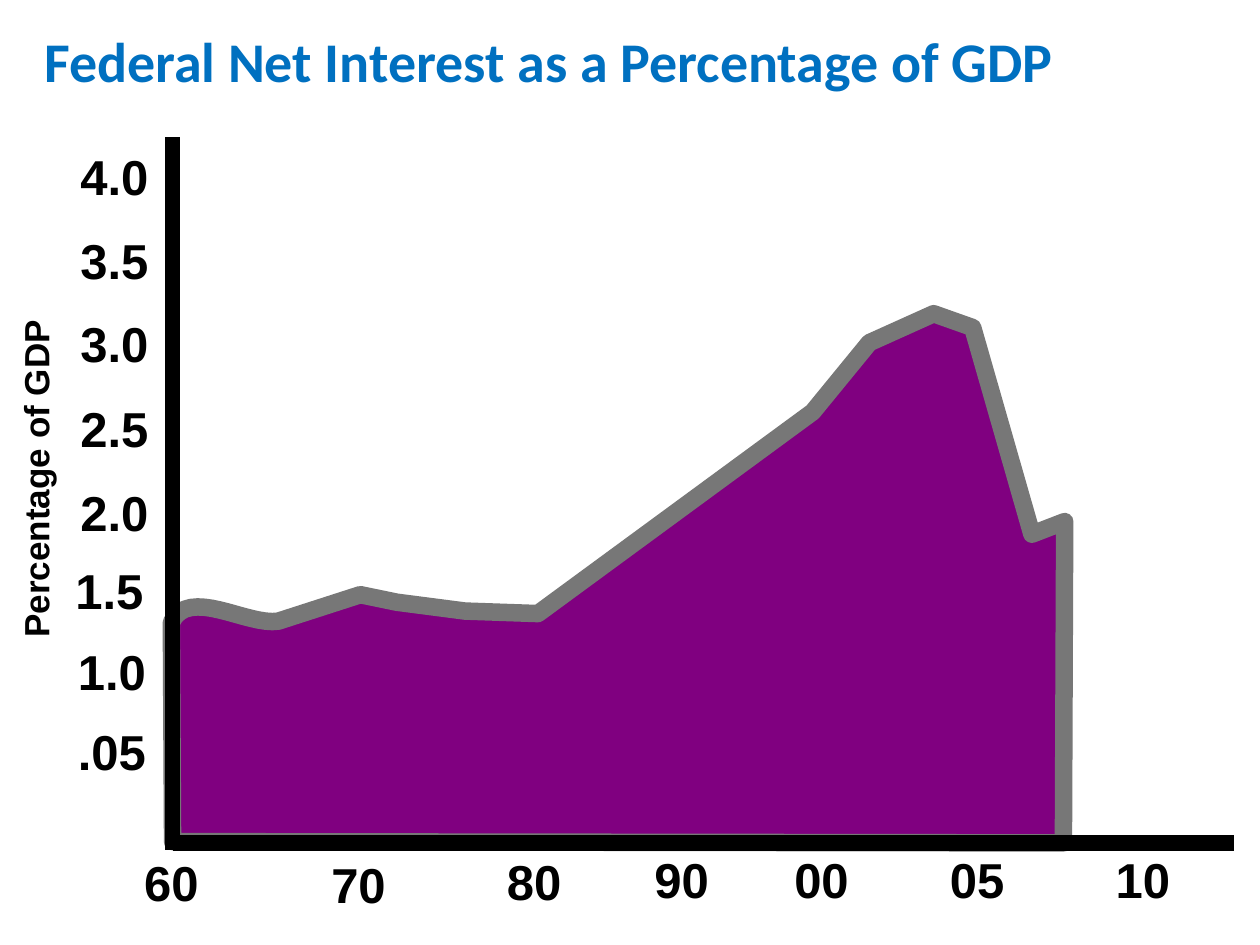
from collections import namedtuple
from dataclasses import dataclass

from lxml import etree
from pptx import Presentation
from pptx.dml.color import RGBColor
from pptx.enum import shapes, text
from pptx.oxml import ns
from pptx.util import Inches, Pt

Box = namedtuple("Box", "left top width height")


@dataclass(frozen=True)
class Theme:
    paper: RGBColor = RGBColor(0xFF, 0xFF, 0xFF)
    ink: RGBColor = RGBColor(0, 0, 0)
    heading: RGBColor = RGBColor(0x00, 0x70, 0xC0)
    area: RGBColor = RGBColor(0x80, 0x00, 0x80)
    outline: RGBColor = RGBColor(0x77, 0x77, 0x77)
    heading_font: str = "Calibri"
    label_font: str = "Arial"
    heading_size: int = 32
    label_size: int = 28
    caption_size: int = 20
    outline_width: int = 10
    axis_width: int = 9


THEME = Theme()
YEARS = [
    ("60", -0.42, 0.03, 0.82),
    ("70", 1.05, 0.04, 0.85),
    ("80", 2.39, 0.02, 0.96),
    ("90", 3.58, 0, 0.92),
    ("00", 4.67, 0, 0.96),
    ("05", 5.92, 0, 0.93),
    ("10", 7.25, 0, 0.9),
]
PERCENTAGES = [
    ("4.0", -0.83, 0.02, 0.97),
    ("3.5", -0.83, 0.69, 0.99),
    ("3.0", -0.83, 1.35, 0.95),
    ("2.5", -0.83, 2.02, 0.84),
    ("2.0", -0.83, 2.69, 0.84),
    ("1.5", -0.87, 3.31, 0.97),
    ("1.0", -0.85, 3.95, 0.85),
    (".05", -0.85, 4.59, 0.9),
]
EARLY_SIXTIES = [(-0.01, 3.85), (0.13, 3.56), (0.59, 3.88), (0.84, 3.84)]
LATER_YEARS = [
    (1.49, 3.63), (1.78, 3.69), (2.32, 3.76), (2.9, 3.78), (5.08, 2.18),
    (5.53, 1.63), (6.04, 1.4), (6.35, 1.51), (6.82, 3.15), (7.08, 3.05),
]
BASE = [(7.07, 5.6), (0, 5.59)]


def write(frame, wording, font, size, color, align):
    frame.word_wrap = True
    frame.vertical_anchor = text.MSO_ANCHOR.TOP
    paragraph = frame.paragraphs[0]
    paragraph.alignment = align
    run = paragraph.add_run()
    run.text = wording
    run.font.name = font
    run.font.size = Pt(size)
    run.font.bold = True
    run.font.color.rgb = color


def add_label(slide, box, wording, size, align):
    label = slide.shapes.add_textbox(*map(Inches, box))
    label.text_frame.auto_size = text.MSO_AUTO_SIZE.SHAPE_TO_FIT_TEXT
    write(label.text_frame, wording, THEME.label_font, size, THEME.ink, align)
    return label


def add_heading(slide, box):
    heading = slide.shapes.title
    heading.left, heading.top, heading.width, heading.height = map(Inches, box)
    heading.fill.solid()
    heading.fill.fore_color.rgb = THEME.paper
    heading.text_frame.auto_size = text.MSO_AUTO_SIZE.SHAPE_TO_FIT_TEXT
    write(heading.text_frame, "Federal Net Interest as a Percentage of GDP",
          THEME.heading_font, THEME.heading_size, THEME.heading, text.PP_ALIGN.LEFT)


def bezier(controls, steps=16):
    for step in range(steps + 1):
        t = step / steps
        weights = ((1 - t) ** 3, 3 * t * (1 - t) ** 2, 3 * t * t * (1 - t), t ** 3)
        yield tuple(sum(w * point[axis] for w, point in zip(weights, controls))
                    for axis in (0, 1))


def add_interest_area(slide, plot):
    outline = [*bezier(EARLY_SIXTIES), *LATER_YEARS, *BASE]
    points = [(Inches(plot.left + x), Inches(plot.top + y)) for x, y in outline]
    builder = slide.shapes.build_freeform(*points[0])
    builder.add_line_segments(points[1:], close=True)
    area = builder.convert_to_shape()
    area.shadow.inherit = False
    area.fill.solid()
    area.fill.fore_color.rgb = THEME.area
    area.line.color.rgb = THEME.outline
    area.line.width = Pt(THEME.outline_width)
    etree.SubElement(area.line._get_or_add_ln(), ns.qn("a:round"))


def add_axis(slide, start, end):
    axis = slide.shapes.add_connector(
        shapes.MSO_CONNECTOR.STRAIGHT, *map(Inches, (*start, *end)))
    axis.line.color.rgb = THEME.ink
    axis.line.width = Pt(THEME.axis_width)
    etree.SubElement(axis._element.spPr, ns.qn("a:effectLst"))


def add_scale(slide, plot, labels, offset, align):
    for wording, x, y, width in labels:
        box = Box(plot.left + x, plot.top + offset + y, width, 0.52)
        add_label(slide, box, wording, THEME.label_size, align)


def add_interest_graph(slide, plot):
    bottom = plot.top + plot.height
    add_scale(slide, plot, YEARS, plot.height, text.PP_ALIGN.CENTER)
    add_scale(slide, plot, PERCENTAGES, 0, text.PP_ALIGN.LEFT)
    add_interest_area(slide, plot)
    add_axis(slide, (plot.left, plot.top), (plot.left, bottom + 0.06))
    caption = add_label(slide, Box(plot.left - 2.98, plot.top + 2.51, 3.75, 0.4),
                        "Percentage of GDP", THEME.caption_size, text.PP_ALIGN.CENTER)
    caption.rotation = 270
    add_axis(slide, (plot.left, bottom), (plot.left + plot.width, bottom))


def main():
    deck = Presentation()
    deck.slide_width, deck.slide_height = Inches(10), Inches(7.5)
    slide = deck.slides.add_slide(deck.slide_layouts[5])
    add_heading(slide, Box(0.25, 0.16, 9.58, 0.59))
    add_interest_graph(slide, Box(1.37, 1.09, 8.42, 5.6))
    deck.save("out.pptx")


if __name__ == "__main__":
    main()
